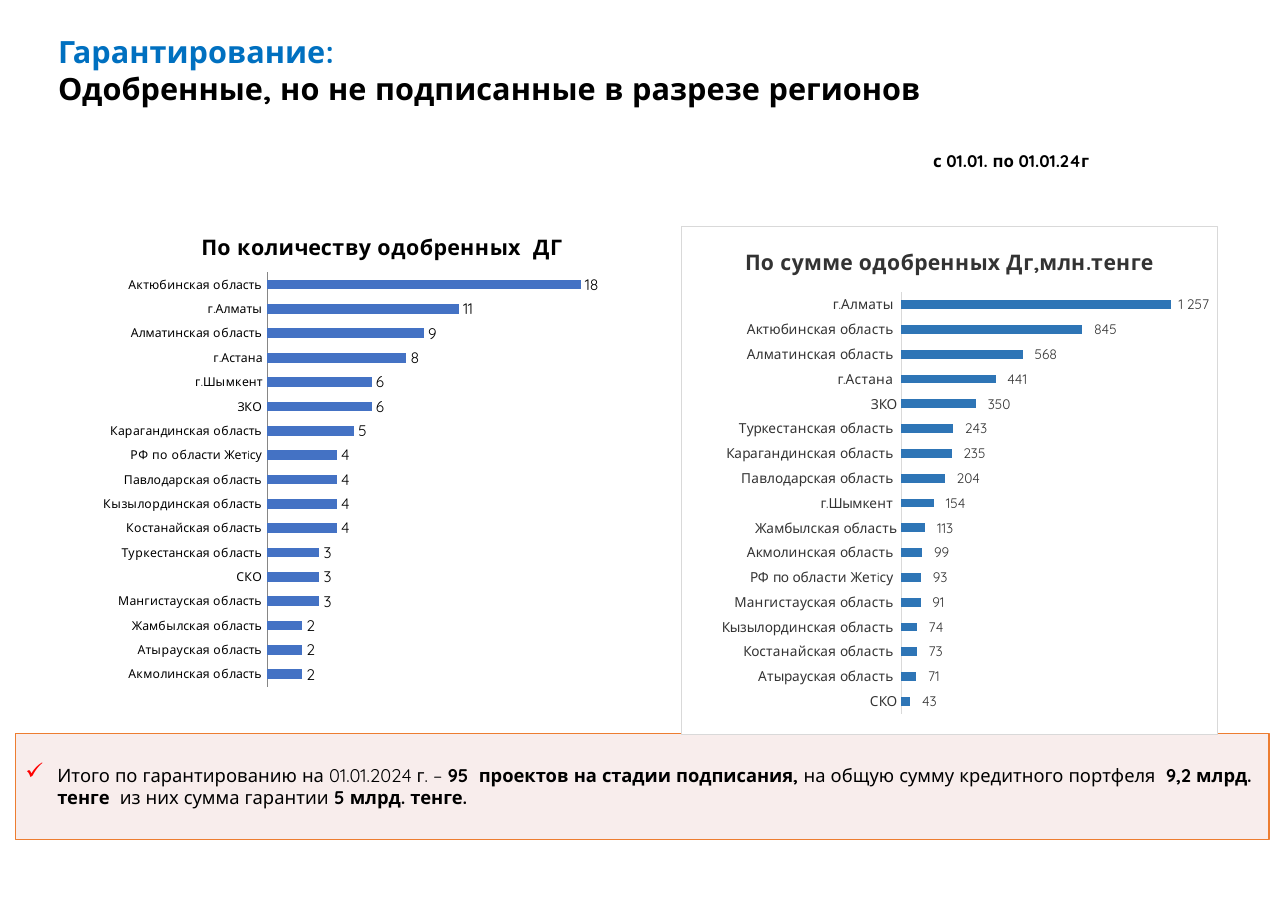
from lxml.etree import SubElement
from pptx import Presentation
from pptx.chart.data import CategoryChartData
from pptx.dml.color import RGBColor
from pptx.enum.chart import XL_CHART_TYPE, XL_LABEL_POSITION, XL_TICK_MARK
from pptx.enum.shapes import MSO_SHAPE
from pptx.enum.text import MSO_ANCHOR, PP_ALIGN
from pptx.oxml import parse_xml
from pptx.oxml.ns import nsdecls, qn
from pptx.util import Inches, Pt

FONT = "Quicksand"
COLOURS = {
    "black": "000000", "heading": "0070C0", "grey_text": "333333",
    "count_bar": "4472C4", "sum_bar": "2E75B6", "axis": "868686",
    "frame": "D9D9D9", "summary_fill": "F2DCDB", "summary_line": "ED7D31",
    "tick": "FF0000",
}
COUNTS = {
    "Акмолинская область": 2, "Атырауская область": 2, "Жамбылская область": 2,
    "Мангистауская область": 3, "СКО": 3, "Туркестанская область": 3,
    "Костанайская область": 4, "Кызылординская область": 4,
    "Павлодарская область": 4, "РФ по области Жетiсу": 4,
    "Карагандинская область": 5, "ЗКО": 6, "г.Шымкент": 6, "г.Астана": 8,
    "Алматинская область": 9, "г.Алматы": 11, "Актюбинская область": 18,
}
SUMS = {
    "СКО": 43, " Атырауская область ": 71, " Костанайская область ": 73,
    " Кызылординская область ": 74, " Мангистауская область ": 91,
    " РФ по области Жетiсу ": 93, " Акмолинская область ": 99,
    "Жамбылская область": 113, " г.Шымкент ": 154,
    " Павлодарская область ": 204, " Карагандинская область ": 235,
    " Туркестанская область ": 243, "ЗКО": 350, " г.Астана ": 441,
    " Алматинская область ": 568, " Актюбинская область ": 845,
    " г.Алматы ": 1257,
}
SUM_FORMAT = r'_-* #\ ##0_р_._-;\-* #\ ##0_р_._-;_-* "-"??_р_._-;_-@_-'
SUMMARY = [
    ("Итого по гарантированию на 01.01.2024 г. – ", False),
    ("95  проектов на стадии подписания, ", True),
    ("на общую сумму кредитного портфеля  ", False),
    ("9,2 млрд. тенге  ", True),
    ("из них сумма гарантии", False),
    (" 5 млрд. тенге.", True),
]


def rgb(name):
    """Return the named colour."""
    return RGBColor.from_string(COLOURS[name])


def set_font(font, size, colour, bold=None):
    """Apply the slide's typeface with a size, colour and weight."""
    font.name, font.size, font.bold = FONT, Pt(size), bold
    font.color.rgb = rgb(colour)


def add_text(slide, box, wrap):
    """Add a text box and return its first paragraph."""
    frame = slide.shapes.add_textbox(*map(Inches, box)).text_frame
    frame.word_wrap = wrap
    return frame.paragraphs[0]


def add_heading(slide):
    """Add the two-line slide heading."""
    heading = add_text(slide, (0.43, 0.25, 8.1, 1.11), True)
    topic = heading.add_run()
    topic.text = "Гарантирование:"
    heading.add_line_break()
    subject = heading.add_run()
    subject.text = "Одобренные, но не подписанные в разрезе регионов"
    set_font(heading.font, 20, "black", True)
    set_font(topic.font, 20, "heading", True)
    set_font(subject.font, 20, "black", True)


def add_period(slide):
    """Add the reporting period."""
    period = add_text(slide, (8.37, 1.32, 1.72, 0.29), False)
    period.text = "с 01.01. по 01.01.24г"
    set_font(period.font, 11, "black", True)


def add_summary(slide):
    """Add the tinted summary panel with its ticked paragraph."""
    panel = slide.shapes.add_shape(
        MSO_SHAPE.RECTANGLE, *map(Inches, (0.14, 6.66, 11.38, 0.96)))
    panel.shadow.inherit = False
    panel.fill.solid()
    panel.fill.fore_color.rgb = rgb("summary_fill")
    tint = panel.element.spPr.find(qn("a:solidFill"))[0]
    SubElement(tint, qn("a:alpha"), val="50000")
    panel.line.color.rgb = rgb("summary_line")
    panel.line.width = Pt(1)

    frame = panel.text_frame
    frame.word_wrap = True
    frame.vertical_anchor = MSO_ANCHOR.MIDDLE
    frame.margin_left = frame.margin_right = Inches(0.08)
    frame.margin_top = frame.margin_bottom = Inches(0.04)
    total = frame.paragraphs[0]
    total.alignment = PP_ALIGN.LEFT
    total.space_after = Pt(6)
    properties = total._p.get_or_add_pPr()
    properties.set("marL", str(Inches(0.3)))
    properties.set("indent", str(Inches(-0.29)))
    tick_colour = SubElement(properties, qn("a:buClr"))
    SubElement(tick_colour, qn("a:srgbClr"), val=COLOURS["tick"])
    SubElement(properties, qn("a:buSzPct"), val="125000")
    SubElement(properties, qn("a:buChar"), char="✓")
    set_font(total.font, 12, "black")
    for words, bold in SUMMARY:
        run = total.add_run()
        run.text = words
        run.font.bold = bold


def place(parent, index, **position):
    """Give a chart part a manual layout in fractions of the chart."""
    for previous in parent.findall(qn("c:layout")):
        parent.remove(previous)
    layout = parse_xml(f"<c:layout {nsdecls('c')}><c:manualLayout/></c:layout>")
    if "w" in position:
        SubElement(layout[0], qn("c:layoutTarget"), val="inner")
    for axis in "xy":
        SubElement(layout[0], qn(f"c:{axis}Mode"), val="edge")
    for key, value in position.items():
        SubElement(layout[0], qn(f"c:{key}"), val=str(value))
    parent.insert(index, layout)


def add_region_chart(slide, box, title, regions, plot_box, maximum, gap,
                     bar, size, label_size, text, axis_line, number_format):
    """Add a bar chart by region and return it."""
    data = CategoryChartData()
    data.categories = list(regions)
    data.add_series("Series 1", list(regions.values()))
    chart = slide.shapes.add_chart(
        XL_CHART_TYPE.BAR_CLUSTERED, *map(Inches, box), data).chart
    set_font(chart.font, 10, "black")
    chart.has_legend = False
    heading = chart.chart_title.text_frame.paragraphs[0]
    heading.text = title
    set_font(heading.font, 14, text, True)
    chart.chart_title.include_in_layout = False
    place(chart.element.find(".//" + qn("c:plotArea")), 0,
          **dict(zip("xywh", plot_box)))

    names = chart.category_axis
    names.major_tick_mark = XL_TICK_MARK.NONE
    names.has_major_gridlines = False
    names.format.line.color.rgb = rgb(axis_line)
    names.format.line.width = Pt(0.75)
    set_font(names.tick_labels.font, size, text)
    values = chart.value_axis
    values.visible = values.has_major_gridlines = False
    values.minimum_scale, values.maximum_scale = 0, maximum

    plot = chart.plots[0]
    plot.gap_width = gap
    plot.vary_by_categories = False
    bars = plot.series[0].format.fill
    bars.solid()
    bars.fore_color.rgb = rgb(bar)
    labels = plot.series[0].data_labels
    labels.show_value = True
    labels.position = XL_LABEL_POSITION.OUTSIDE_END
    labels.number_format = number_format
    labels.number_format_is_linked = False
    set_font(labels.font, label_size, text)
    return chart


def frame_chart(chart):
    """Give a chart a white ground and a thin border."""
    chart.element.find(qn("c:txPr")).addprevious(parse_xml(
        f"<c:spPr {nsdecls('c', 'a')}><a:solidFill><a:srgbClr val='FFFFFF'/>"
        f"</a:solidFill><a:ln w='{Pt(0.75)}'><a:solidFill><a:srgbClr "
        f"val='{COLOURS['frame']}'/></a:solidFill></a:ln></c:spPr>"))


def main():
    """Build and save the slide."""
    deck = Presentation()
    deck.slide_width, deck.slide_height = Inches(11.69), Inches(8.27)
    slide = deck.slides.add_slide(deck.slide_layouts[6])
    add_period(slide)
    add_heading(slide)
    add_summary(slide)
    count_chart = add_region_chart(
        slide, (0.58, 1.93, 5.27, 4.53), "По количеству одобренных  ДГ",
        COUNTS, (0.35, 0.12, 0.6, 0.83), 20, 150, "count_bar", 8, 10,
        "black", "axis", "#,##0")
    place(count_chart.chart_title.element, 1, x=0.23, y=0.03)
    sum_chart = add_region_chart(
        slide, (6.18, 2.05, 4.93, 4.62), "По сумме одобренных Дг,млн.тенге",
        SUMS, (0.41, 0.13, 0.56, 0.83), 1400, 182, "sum_bar", 9, 9,
        "grey_text", "frame", SUM_FORMAT)
    frame_chart(sum_chart)
    deck.save("out.pptx")


if __name__ == "__main__":
    main()
